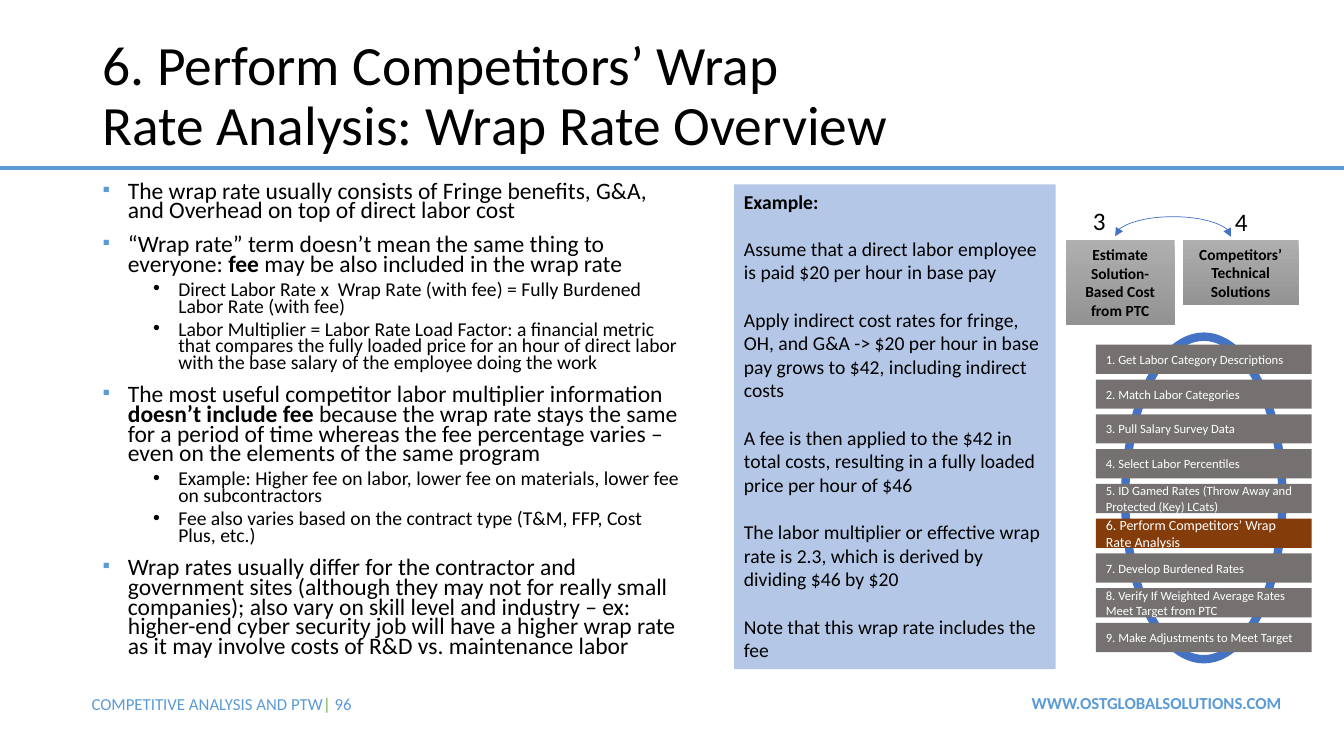
from lxml import etree
from pptx import Presentation
from pptx.dml.color import RGBColor
from pptx.enum.shapes import MSO_CONNECTOR, MSO_SHAPE
from pptx.enum.text import MSO_ANCHOR, PP_ALIGN
from pptx.oxml.ns import qn
from pptx.util import Inches, Pt

RECT, OVAL, ARC = MSO_SHAPE.RECTANGLE, MSO_SHAPE.OVAL, MSO_SHAPE.ARC
TOP, MIDDLE = MSO_ANCHOR.TOP, MSO_ANCHOR.MIDDLE
LEFT, CENTER, RIGHT = PP_ALIGN.LEFT, PP_ALIGN.CENTER, PP_ALIGN.RIGHT

FONT = "Calibri"
BLACK, WHITE = "000000", "FFFFFF"
SKY, BLUE, GREEN = "5B9BD5", "4472C4", "70AD47"
PALE, GREY, BROWN = "B4C7E7", "767171", "843C0B"

# Each point: level, then runs; a bold run is a (text, True) pair
POINTS = [
    (0, ["The wrap rate usually consists of Fringe benefits, G&A, and Overhead "
         "on top of direct labor cost"]),
    (0, ["“Wrap rate” term doesn’t mean the same thing to everyone: ",
         ("fee", True), " may be also included in the wrap rate"]),
    (1, ["Direct Labor Rate x  Wrap Rate (with fee) = Fully Burdened Labor Rate (with fee)"]),
    (1, ["Labor Multiplier = Labor Rate Load Factor: a financial metric that compares "
         "the fully loaded price for an hour of direct labor with the base salary of "
         "the employee doing the work"]),
    (0, ["The most useful competitor labor multiplier information ",
         ("doesn’t include fee ", True),
         "because the wrap rate stays the same for a period of time whereas the fee "
         "percentage varies – even on the elements of the same program"]),
    (1, ["Example: Higher fee on labor, lower fee on materials, lower fee on subcontractors"]),
    (1, ["Fee also varies based on the contract type (T&M, FFP, Cost Plus, etc.)"]),
    (0, ["Wrap rates usually differ for the contractor and government sites (although "
         "they may not for really small companies); also vary on skill level and "
         "industry – ex: higher-end cyber security job will have a higher wrap rate as "
         "it may involve costs of R&D vs. maintenance labor"]),
]
EXAMPLE = [
    "Assume that a direct labor employee is paid $20 per hour in base pay",
    "Apply indirect cost rates for fringe, OH, and G&A -> $20 per hour in base pay "
    "grows to $42, including indirect costs",
    "A fee is then applied to the $42 in total costs, resulting in a fully loaded "
    "price per hour of $46",
    "The labor multiplier or effective wrap rate is 2.3, which is derived by "
    "dividing $46 by $20",
    "Note that this wrap rate includes the fee",
]
STEPS = [
    "1. Get Labor Category Descriptions",
    "2. Match Labor Categories",
    "3. Pull Salary Survey Data",
    "4. Select Labor Percentiles",
    "5. ID Gamed Rates (Throw Away and Protected (Key) LCats)",
    "6. Perform Competitors’ Wrap Rate Analysis",
    "7. Develop Burdened Rates",
    "8. Verify If Weighted Average Rates Meet Target from PTC",
    "9. Make Adjustments to Meet Target",
]
CURRENT_STEP = 5


def rgb(color):
    return RGBColor.from_string(color)


def add_run(p, text, size=14, color=BLACK, bold=False):
    r = p.add_run()
    r.text = text
    r.font.name, r.font.size, r.font.bold = FONT, Pt(size), bold
    r.font.color.rgb = rgb(color)


def next_paragraph(tf):
    """Return the empty first paragraph, or a new one."""
    return tf.add_paragraph() if tf.paragraphs[0].runs else tf.paragraphs[0]


def add_frame(s, anchor=TOP):
    tf = s.text_frame
    tf.word_wrap, tf.vertical_anchor = True, anchor
    return tf


def add_text(slide, box, text="", align=LEFT, anchor=TOP, spacing=None, **fmt):
    tf = add_frame(slide.shapes.add_textbox(*map(Inches, box)), anchor)
    p = tf.paragraphs[0]
    p.alignment = align
    if spacing:
        p.line_spacing = spacing
    if text:
        add_run(p, text, **fmt)
    return tf


def add_shape(slide, kind, box, fill=None, line=None, width=1):
    s = slide.shapes.add_shape(kind, *map(Inches, box))
    s.shadow.inherit = False
    if fill:
        s.fill.solid()
        s.fill.fore_color.rgb = rgb(fill)
    else:
        s.fill.background()
    if line:
        s.line.color.rgb = rgb(line)
        s.line.width = Pt(width)
    else:
        s.line.fill.background()
    return s


def label(s, text, align=LEFT, **fmt):
    p = add_frame(s, MIDDLE).paragraphs[0]
    p.alignment = align
    add_run(p, text, **fmt)


def add_bullet(p, level):
    pPr = p._p.get_or_add_pPr()
    pPr.set("marL", str(Inches(0.75 if level else 0.25)))
    pPr.set("indent", str(-Inches(0.25)))
    if level == 0:
        clr = etree.SubElement(pPr, qn("a:buClr"))
        etree.SubElement(clr, qn("a:srgbClr"), val=SKY)
        etree.SubElement(pPr, qn("a:buSzPct"), val="90000")
    etree.SubElement(pPr, qn("a:buFont"), typeface="Arial")
    etree.SubElement(pPr, qn("a:buChar"), char="•" if level else "▪")


def add_points(slide, box):
    tf = add_text(slide, box)
    for i, (level, runs) in enumerate(POINTS):
        p = next_paragraph(tf)
        p.level = level
        add_bullet(p, level)
        p.line_spacing = 0.7
        if i:
            p.space_before = Pt(5 if level else 10)
        for run in runs:
            text, bold = run if isinstance(run, tuple) else (run, False)
            add_run(p, text, size=14 if level else 16.8, bold=bold)


def add_example(slide, box):
    tf = add_frame(add_shape(slide, RECT, box, fill=PALE))
    for i, text in enumerate(["Example:"] + EXAMPLE):
        p = next_paragraph(tf)
        p.alignment = LEFT
        if i:
            p.space_before = Pt(17)
        add_run(p, text, bold=i == 0)


def add_steps(slide):
    add_shape(slide, OVAL, (11.16, 3.34, 1.56, 3.2), line=BLUE, width=6)
    for i, text in enumerate(STEPS):
        current = i == CURRENT_STEP
        s = add_shape(slide, RECT, (10.87, 3.42 + 0.345 * i, 2.14, 0.29),
                      fill=BROWN if current else GREY)
        label(s, text, size=10 if current else 9, color=WHITE)


def add_source_box(slide, box, text):
    s = add_shape(slide, RECT, box)
    s.fill.gradient()
    s.fill.gradient_angle = 270
    for stop, color in zip(s.fill.gradient_stops, ("AFAFAF", "939393")):
        stop.color.rgb = rgb(color)
    label(s, text, align=CENTER, size=11, bold=True)


def add_double_arc(slide, box):
    s = add_shape(slide, ARC, box, line=BLUE, width=0.5)
    s.adjustments[0], s.adjustments[1] = 108.35, 0
    for end in ("a:headEnd", "a:tailEnd"):
        etree.SubElement(s.line._get_or_add_ln(), qn(end), type="triangle")


def add_rule(slide, y):
    s = slide.shapes.add_connector(MSO_CONNECTOR.STRAIGHT, 0, Inches(y),
                                   Inches(13.33), Inches(y))
    s.line.color.rgb = rgb(SKY)
    s.line.width = Pt(3)
    etree.SubElement(s._element.spPr, qn("a:effectLst"))


def main():
    prs = Presentation()
    prs.slide_width, prs.slide_height = Inches(13.33), Inches(7.5)
    slide = prs.slides.add_slide(prs.slide_layouts[6])

    # Rule and footer
    add_rule(slide, 1.67)
    add_text(slide, (9.39, 6.82, 3.42, 0.3), "WWW.OSTGLOBALSOLUTIONS.COM",
             align=RIGHT, size=12, color=SKY, bold=True)
    footer = add_text(slide, (0.81, 6.83, 4.82, 0.3)).paragraphs[0]
    for text, color in (("COMPETITIVE ANALYSIS AND PTW", SKY), ("| ", GREEN), ("96", SKY)):
        add_run(footer, text, size=12, color=color)

    # Title and main text
    add_text(slide, (0.92, 0.4, 8.03, 1.14),
             "6. Perform Competitors’ Wrap Rate Analysis: Wrap Rate Overview",
             anchor=MIDDLE, spacing=0.9, size=39.6)
    add_points(slide, (0.92, 1.77, 5.95, 5.42))
    add_example(slide, (7.28, 1.83, 3.19, 4.81))

    # Process steps and their sources
    add_steps(slide)
    add_source_box(slide, (11.73, 2.38, 1.15, 0.65), "Competitors’ Technical Solutions")
    add_source_box(slide, (10.57, 2.38, 1.08, 0.84), "Estimate Solution-Based Cost from PTC")
    add_text(slide, (12.15, 2, 0.85, 0.4), "4", size=18)
    add_text(slide, (10.74, 1.99, 0.85, 0.4), "3", size=18)
    add_double_arc(slide, (11.06, 2.15, 1.15, 0.4))

    prs.save("out.pptx")


if __name__ == "__main__":
    main()
